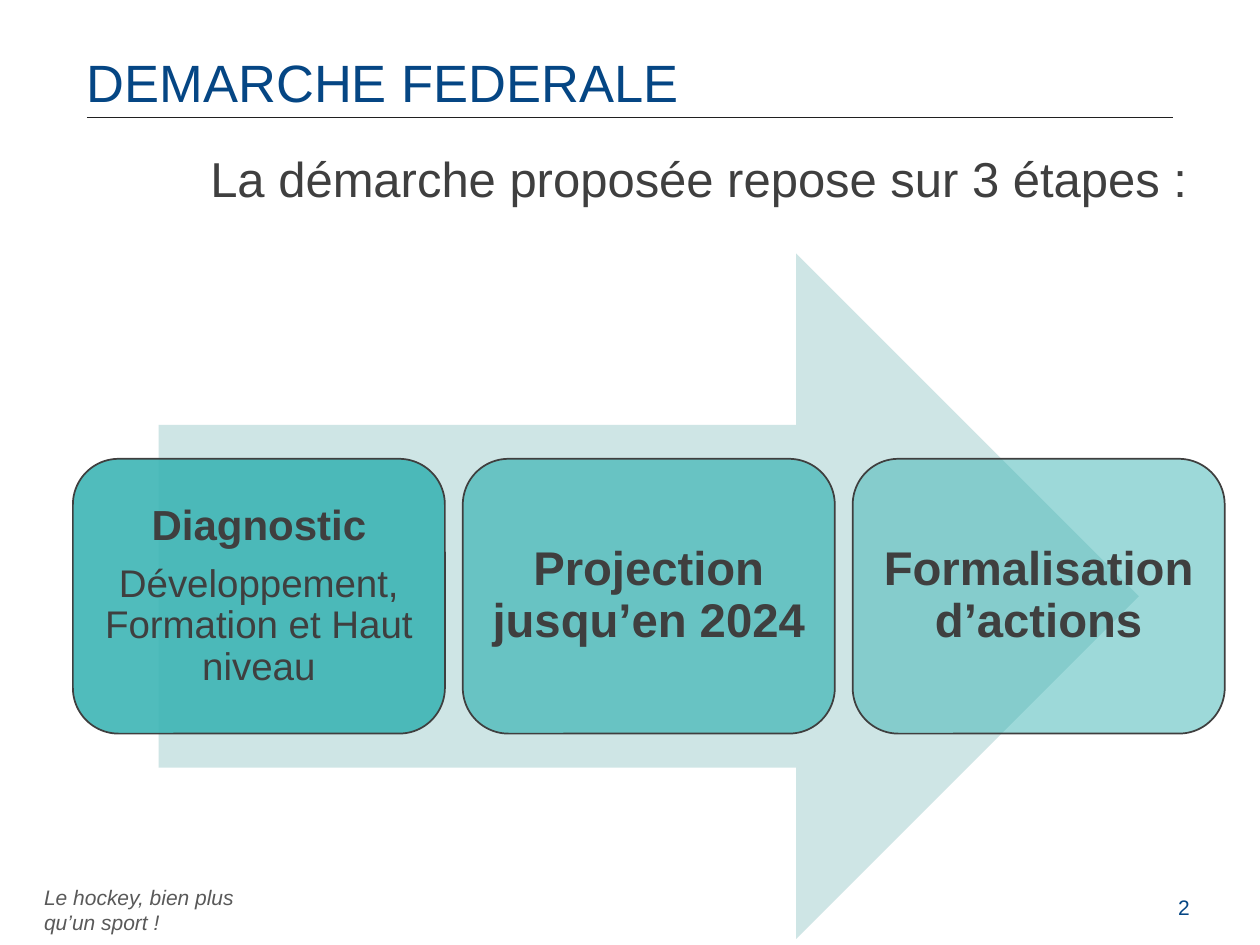
import pptx
import pptx.util
import pptx.dml.color
import pptx.enum.shapes
import pptx.enum.text
from lxml import etree
from pptx.oxml.ns import qn

Cm = pptx.util.Cm
Pt = pptx.util.Pt
SHAPE = pptx.enum.shapes.MSO_SHAPE
ANCHOR = pptx.enum.text.MSO_ANCHOR
ALIGN = pptx.enum.text.PP_ALIGN

# Content
TITLE = "DEMARCHE FEDERALE"
INTRO = "La démarche proposée repose sur 3 étapes :"
FOOTER = "Le hockey, bien plus qu’un sport !"
PAGE = "2"
# Each step: opacity in percent, inset in cm, lines of (text, size, bold)
STEPS = [
    (90, 0.25, [("Diagnostic", 24, True),
                ("Développement, Formation et Haut niveau", 22, False)]),
    (70, 0.28, [("Projection jusqu’en 2024", 27, True)]),
    (50, 0.28, [("Formalisation d’actions", 27, True)]),
]
COLORS = {"navy": "054684", "text": "3F3F3F", "footer": "595959",
          "rule": "202020", "arrow": "CEE5E5", "step": "3DB5B5"}

# Layout in cm
STEP_LEFT, STEP_TOP, STEP_W, STEP_H, STEP_GAP = 1.47, 9.25, 7.5, 5.54, 0.36


def rgb(name):
    return pptx.dml.color.RGBColor.from_string(COLORS[name])


def set_insets(tf, left, top, right, bottom):
    tf.margin_left, tf.margin_top = Cm(left), Cm(top)
    tf.margin_right, tf.margin_bottom = Cm(right), Cm(bottom)


def style(p, size, color, bold=False, italic=False, spacing=None):
    font = p.font
    font.name, font.size = "Arial", Pt(size)
    font.bold, font.italic = bold, italic
    font.color.rgb = rgb(color)
    if spacing:
        p.line_spacing = spacing


def add_text(s, text, box, insets, size, color, wrap=True,
             anchor=ANCHOR.TOP, **options):
    tf = s.shapes.add_textbox(*map(Cm, box)).text_frame
    tf.word_wrap = wrap
    tf.vertical_anchor = anchor
    set_insets(tf, *insets)
    p = tf.paragraphs[0]
    p.text = text
    style(p, size, color, **options)


def add_step(s, index, opacity, inset, lines):
    left = STEP_LEFT + index * (STEP_W + STEP_GAP)
    sp = s.shapes.add_shape(SHAPE.ROUNDED_RECTANGLE, Cm(left), Cm(STEP_TOP),
                            Cm(STEP_W), Cm(STEP_H))
    sp.shadow.inherit = False
    sp.fill.solid()
    sp.fill.fore_color.rgb = rgb("step")
    fill = sp._element.spPr.find(qn("a:solidFill"))
    etree.SubElement(fill[0], qn("a:alpha"), val=str(opacity * 1000))
    sp.line.color.rgb = rgb("text")
    sp.line.width = Pt(1)

    tf = sp.text_frame
    tf.word_wrap = True
    tf.vertical_anchor = ANCHOR.MIDDLE
    set_insets(tf, inset, inset, inset, inset)
    for i, (text, size, bold) in enumerate(lines):
        p = tf.paragraphs[0] if i == 0 else tf.add_paragraph()
        p.text = text
        p.alignment = ALIGN.CENTER
        p.space_after = Pt(round(size * 0.35, 1))
        style(p, size, "text", bold=bold, spacing=0.9)


def main():
    prs = pptx.Presentation()
    prs.slide_width, prs.slide_height = Cm(25.4), Cm(19.05)
    s = prs.slides.add_slide(prs.slide_layouts[6])

    # Footer and page number
    add_text(s, FOOTER, (0.89, 18.08, 4.95, 0.51), (0, 0, 0, 0), 12, "footer",
             wrap=False, anchor=ANCHOR.MIDDLE, italic=True)
    add_text(s, PAGE, (23.5, 17.91, 1.19, 1.02), (0.25, 0.13, 0.25, 0.13),
             12, "navy")

    # Title with its rule
    rule = s.shapes.add_connector(pptx.enum.shapes.MSO_CONNECTOR.STRAIGHT,
                                  Cm(1.75), Cm(2.36), Cm(23.65), Cm(2.36))
    rule.line.color.rgb = rgb("rule")
    rule.line.width = Pt(0.5)
    etree.SubElement(rule._element.spPr, qn("a:effectLst"))
    add_text(s, TITLE, (1.75, 1.02, 21.9, 1.32), (0, 0.13, 0.25, 0.13),
             30, "navy", spacing=0.9)

    # Introduction
    add_text(s, INTRO, (4.24, 3.12, 21.95, 12.34), (0, 0, 0, 0), 28, "text",
             spacing=0.9)

    # Background arrow
    arrow = s.shapes.add_shape(SHAPE.RIGHT_ARROW, Cm(3.2), Cm(5.11),
                               Cm(19.76), Cm(13.82))
    arrow.shadow.inherit = False
    arrow.fill.solid()
    arrow.fill.fore_color.rgb = rgb("arrow")
    arrow.line.fill.background()

    # Steps
    for index, step in enumerate(STEPS):
        add_step(s, index, *step)

    prs.save("out.pptx")


if __name__ == "__main__":
    main()
